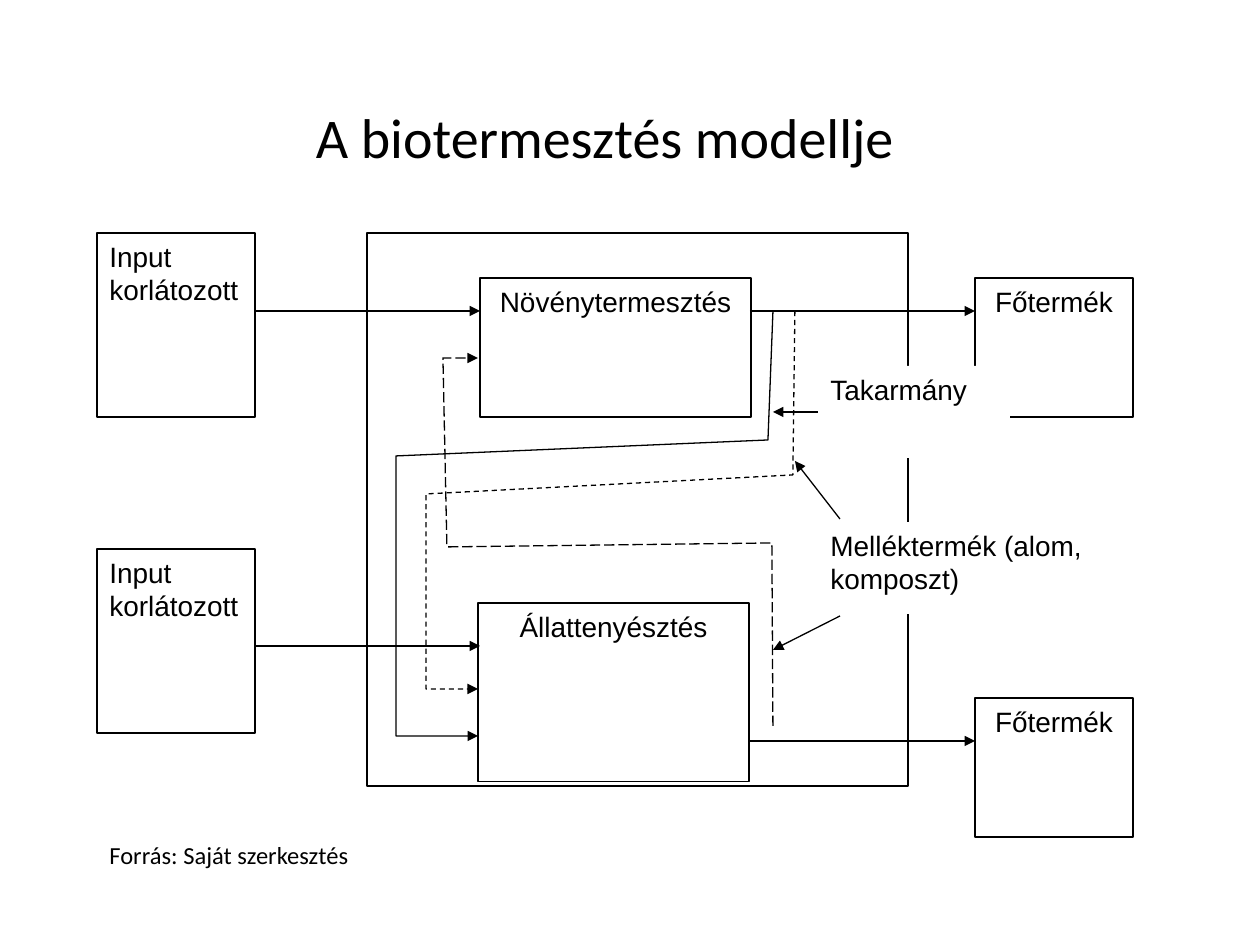
from dataclasses import dataclass

from pptx import Presentation
from pptx.dml.color import RGBColor
from pptx.enum import dml, shapes, text
from pptx.oxml.ns import qn
from pptx.util import Pt
from lxml import etree

PX = 914400 // 126


@dataclass(frozen=True)
class Theme:
    ink: RGBColor = RGBColor(0, 0, 0)
    paper: RGBColor = RGBColor(255, 255, 255)
    label_font: str = "Arial"
    heading_font: str = "Calibri"
    title_size: int = 32
    label_size: int = 16
    source_size: int = 14
    stroke: float = 0.75


THEME = Theme()


def px(*lengths):
    return [length * PX for length in lengths]


def write(frame, content, *, font=THEME.label_font, size=THEME.label_size,
          align=text.PP_ALIGN.LEFT):
    frame.word_wrap = True
    frame.vertical_anchor = text.MSO_ANCHOR.TOP
    frame.text = content
    for paragraph in frame.paragraphs:
        paragraph.alignment = align
        paragraph.font.name = font
        paragraph.font.size = Pt(size)
        paragraph.font.color.rgb = THEME.ink


def add_box(slide, bounds, content="", *, outlined=True, **style):
    box = slide.shapes.add_shape(shapes.MSO_SHAPE.RECTANGLE, *px(*bounds))
    box.shadow.inherit = False
    box.fill.solid()
    box.fill.fore_color.rgb = THEME.paper
    if outlined:
        draw_stroke(box)
    else:
        box.line.fill.background()
    if content:
        write(box.text_frame, content, **style)
    return box


def add_caption(slide, bounds, content, **style):
    caption = slide.shapes.add_textbox(*px(*bounds))
    write(caption.text_frame, content, **style)


def draw_stroke(item, dash=None):
    item.line.color.rgb = THEME.ink
    item.line.width = Pt(THEME.stroke)
    if dash:
        item.line.dash_style = dash


def add_arrowhead(item):
    outline = item.element.spPr.find(qn("a:ln"))
    etree.SubElement(outline, qn("a:tailEnd"), type="triangle")


def add_arrow(slide, start, end):
    arrow = slide.shapes.add_connector(
        shapes.MSO_CONNECTOR.STRAIGHT, *px(*start, *end))
    draw_stroke(arrow)
    add_arrowhead(arrow)
    etree.SubElement(arrow.element.spPr, qn("a:effectLst"))
    return arrow


def add_route(slide, points, dash=None):
    start, *bends = [px(*point) for point in points]
    builder = slide.shapes.build_freeform(*start)
    builder.add_line_segments(bends, close=False)
    route = builder.convert_to_shape()
    route.shadow.inherit = False
    route.fill.background()
    draw_stroke(route, dash)
    add_arrowhead(route)


def add_production(slide):
    center = text.PP_ALIGN.CENTER
    input_left, input_width = 97, 158
    product_left, product_width = 975, 158

    add_box(slide, (367, 233, 541, 553))
    for top in (233, 549):
        add_box(slide, (input_left, top, input_width, 184), "Input\nkorlátozott")
    add_box(slide, (480, 278, 271, 139), "Növénytermesztés", align=center)
    add_box(slide, (478, 603, 271, 179), "Állattenyésztés", align=center)
    for top in (278, 698):
        add_box(slide, (product_left, top, product_width, 139), "Főtermék",
                align=center)

    for y in (311, 646):
        add_arrow(slide, (input_left + input_width, y), (480, y))
    for y in (311, 741):
        add_arrow(slide, (750, y), (product_left, y))


def add_internal_flows(slide):
    feed = add_box(slide, (818, 366, 192, 92), "Takarmány", outlined=False)
    add_box(slide, (818, 522, 383, 92), "Melléktermék (alom, komposzt)",
            outlined=False)

    add_route(slide, [(773, 311), (768, 440), (396, 456), (396, 736), (478, 736)])
    add_route(slide, [(795, 311), (793, 475), (426, 494), (426, 689), (478, 689)],
              dml.MSO_LINE.DASH)
    add_route(slide, [(773, 726), (772, 543), (447, 547), (443, 358), (478, 358)],
              dml.MSO_LINE.LONG_DASH)

    add_arrow(slide, (818, 412), (773, 412)).begin_connect(feed, 1)
    add_arrow(slide, (840, 616), (773, 650))
    add_arrow(slide, (840, 519), (795, 461))


def main():
    deck = Presentation()
    deck.slide_width, deck.slide_height = px(1260, 945)
    slide = deck.slides.add_slide(deck.slide_layouts[6])
    add_production(slide)
    add_internal_flows(slide)
    add_caption(slide, (290, 96, 630, 149), "A biotermesztés modellje",
                font=THEME.heading_font, size=THEME.title_size,
                align=text.PP_ALIGN.CENTER)
    add_caption(slide, (97, 834, 287, 43), "Forrás: Saját szerkesztés",
                font=THEME.heading_font, size=THEME.source_size)
    deck.save("out.pptx")


if __name__ == "__main__":
    main()
